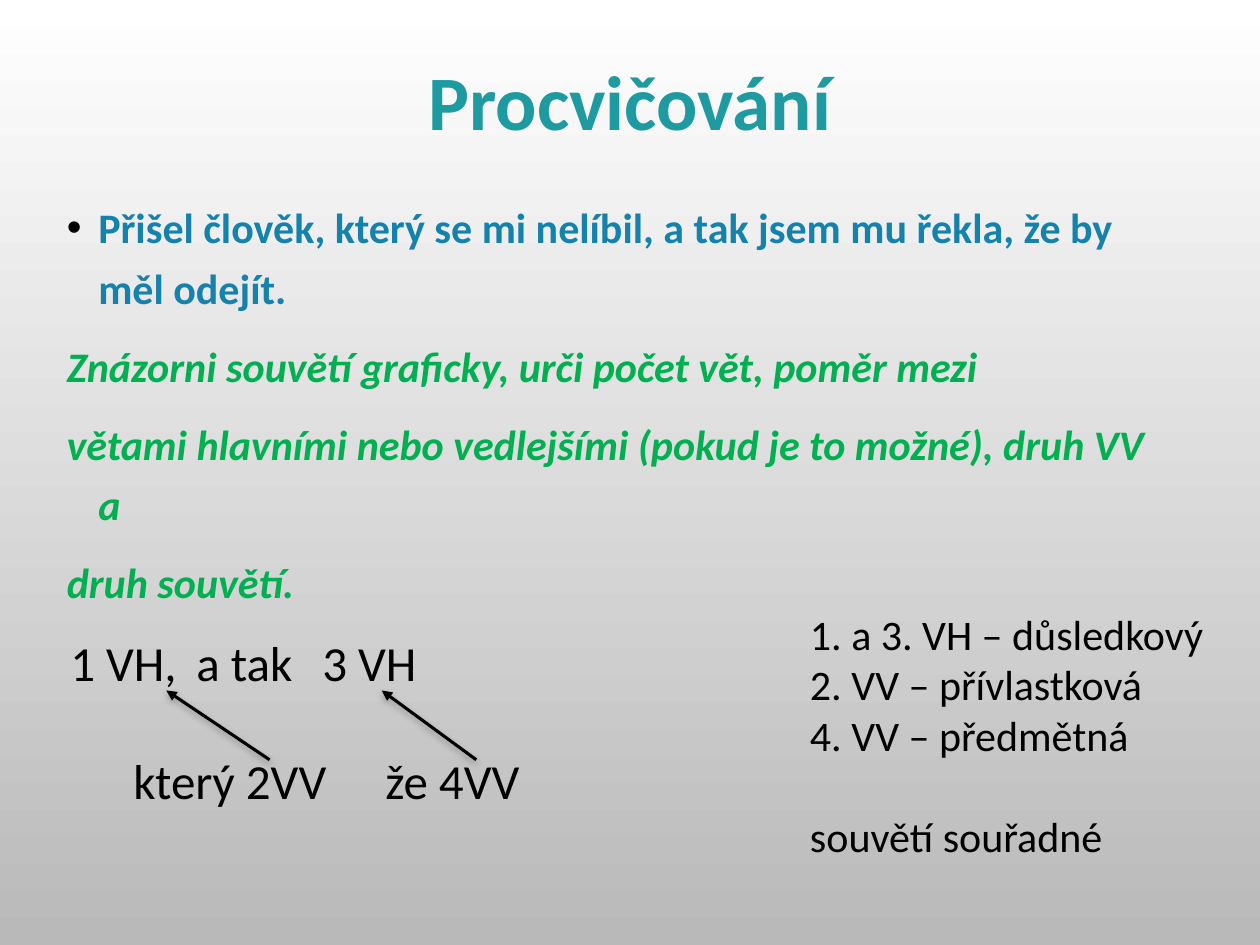
from dataclasses import dataclass

from pptx import Presentation
from pptx import util as u
from pptx.dml.color import RGBColor
from pptx.enum import text
from pptx.oxml import parse_xml
from pptx.oxml.ns import nsdecls, qn
from pptx.enum.shapes import MSO_CONNECTOR

CELL = 0.1  # inches; the slide is a grid of 100 columns by 75 rows


@dataclass(frozen=True)
class Theme:
    font: str = "Calibri"
    title: str = "1D9BA1"
    sentence: str = "1482AC"
    task: str = "00B050"
    ink: str = "000000"
    sky: tuple = ("FFFFFF", "B9B9B9")
    title_size: int = 44
    body_size: int = 24
    diagram_size: int = 28
    arrow_width: float = 1.75


@dataclass(frozen=True)
class Area:
    col: float
    row: float
    cols: float
    rows: float


@dataclass(frozen=True)
class Line:
    words: str
    style: dict
    before: float = 0
    spacing: float = 1.0
    hanging: float = 0
    bullet: str = ""
    tabs: tuple = ()


@dataclass(frozen=True)
class Arrow:
    start: tuple
    end: tuple


THEME = Theme()


def cells(count: float) -> int:
    return u.Inches(count * CELL)


def style(size: float, color: str, **extra) -> dict:
    return {"name": THEME.font, "size": u.Pt(size), "color": color,
            "bold": False, "italic": False, **extra}


def place(box, area: Area) -> None:
    box.left, box.top = cells(area.col), cells(area.row)
    box.width, box.height = cells(area.cols), cells(area.rows)


def set_markers(para, line: Line) -> None:
    """Set the hanging indent, bullet and tab stops of a paragraph."""
    props = para._p.get_or_add_pPr()
    props.set("marL", str(u.Inches(line.hanging)))
    props.set("indent", str(-u.Inches(line.hanging)))
    parts = []
    if line.bullet:
        parts += [f'<a:buClr {nsdecls("a")}><a:srgbClr val="{THEME.ink}"/></a:buClr>',
                  f'<a:buChar {nsdecls("a")} char="{line.bullet}"/>']
    else:
        parts.append(f'<a:buNone {nsdecls("a")}/>')
    if line.tabs:
        stops = "".join(f'<a:tab pos="{u.Inches(stop)}" algn="l"/>' for stop in line.tabs)
        parts.append(f'<a:tabLst {nsdecls("a")}>{stops}</a:tabLst>')
    for part in parts:
        props.append(parse_xml(part))


def write(frame, lines: list[Line], align=text.PP_ALIGN.LEFT, **frame_format) -> None:
    settings = {"auto_size": text.MSO_AUTO_SIZE.NONE, "word_wrap": True, **frame_format}
    for name, value in settings.items():
        setattr(frame, name, value)
    for index, line in enumerate(lines):
        para = frame.add_paragraph() if index else frame.paragraphs[0]
        set_markers(para, line)
        para.alignment = align
        para.line_spacing = line.spacing
        para.space_before = u.Pt(line.before)
        span = para.add_run()
        span.text = line.words
        for name, value in line.style.items():
            if name == "color":
                span.font.color.rgb = RGBColor.from_string(value)
            else:
                setattr(span.font, name, value)


def add_text(page, area: Area, lines: list[Line], **frame_format) -> None:
    box = page.shapes.add_textbox(0, 0, 0, 0)
    place(box, area)
    write(box.text_frame, lines, **frame_format)


def add_arrow(page, arrow: Arrow) -> None:
    ends = [cells(value) for value in (*arrow.start, *arrow.end)]
    link = page.shapes.add_connector(MSO_CONNECTOR.STRAIGHT, *ends)
    link.line.color.rgb = RGBColor.from_string(THEME.ink)
    link.line.width = u.Pt(THEME.arrow_width)
    props = link._element.spPr
    props.find(qn("a:ln")).append(parse_xml(f'<a:tailEnd {nsdecls("a")} type="triangle"/>'))
    props.append(parse_xml(
        f'<a:effectLst {nsdecls("a")}><a:outerShdw blurRad="{u.Pt(4)}" dist="{u.Pt(2)}" '
        f'dir="5400000" rotWithShape="0"><a:srgbClr val="{THEME.ink}">'
        '<a:alpha val="28000"/></a:srgbClr></a:outerShdw></a:effectLst>'))


def paint_background(page) -> None:
    fill = page.background.fill
    fill.gradient()
    fill.gradient_angle = 270
    for stop, color in zip(fill.gradient_stops, THEME.sky):
        stop.color.rgb = RGBColor.from_string(color)


def main() -> None:
    deck = Presentation()
    deck.slide_width, deck.slide_height = cells(100), cells(75)
    page = deck.slides.add_slide(deck.slide_layouts[1])
    paint_background(page)

    title, body = page.placeholders
    place(title, Area(9.4, 2.9, 81.2, 11))
    write(title.text_frame,
          [Line("Procvičování", style(THEME.title_size, THEME.title, bold=True), spacing=0.9)],
          align=text.PP_ALIGN.CENTER, vertical_anchor=text.MSO_ANCHOR.MIDDLE)

    sentence = style(THEME.body_size, THEME.sentence, bold=True)
    task = style(THEME.body_size, THEME.task, bold=True, italic=True)
    place(body, Area(4.3, 14.7, 90.7, 55.1))
    tasks = ["Znázorni souvětí graficky, urči počet vět, poměr mezi",
             "větami hlavními nebo vedlejšími (pokud je to možné), druh VV a",
             "druh souvětí."]
    write(body.text_frame,
          [Line("Přišel člověk, který se mi nelíbil, a tak jsem mu řekla, že by měl odejít.",
                sentence, spacing=1.2, hanging=0.25, bullet="•")]
          + [Line(words, task, before=10, spacing=1.2, hanging=0.25) for words in tasks],
          margin_right=u.Inches(0.25))

    clause = style(THEME.diagram_size, THEME.ink)
    add_text(page, Area(-0.4, 49.7, 61.4, 24.6), [
        Line("\t1 VH,\ta tak\t3 VH", clause, tabs=(0.5, 1.69, 2.72)),
        Line("\t\tkterý 2VV\tže 4VV", clause, before=34, tabs=(0.5, 1, 2.79))])

    answer = style(THEME.body_size, THEME.ink)
    answers = ["1. a 3. VH – důsledkový", "2. VV – přívlastková", "4. VV – předmětná"]
    add_text(page, Area(63.3, 47.8, 33.5, 21.2),
             [Line(words, answer, hanging=0.38) for words in answers]
             + [Line("souvětí souřadné", answer, before=29, hanging=0.38)],
             word_wrap=False)

    for arrow in (Arrow((21.4, 60.3), (13.2, 54.8)), Arrow((37.8, 60.3), (30.3, 54.8))):
        add_arrow(page, arrow)

    deck.save("out.pptx")


if __name__ == "__main__":
    main()
